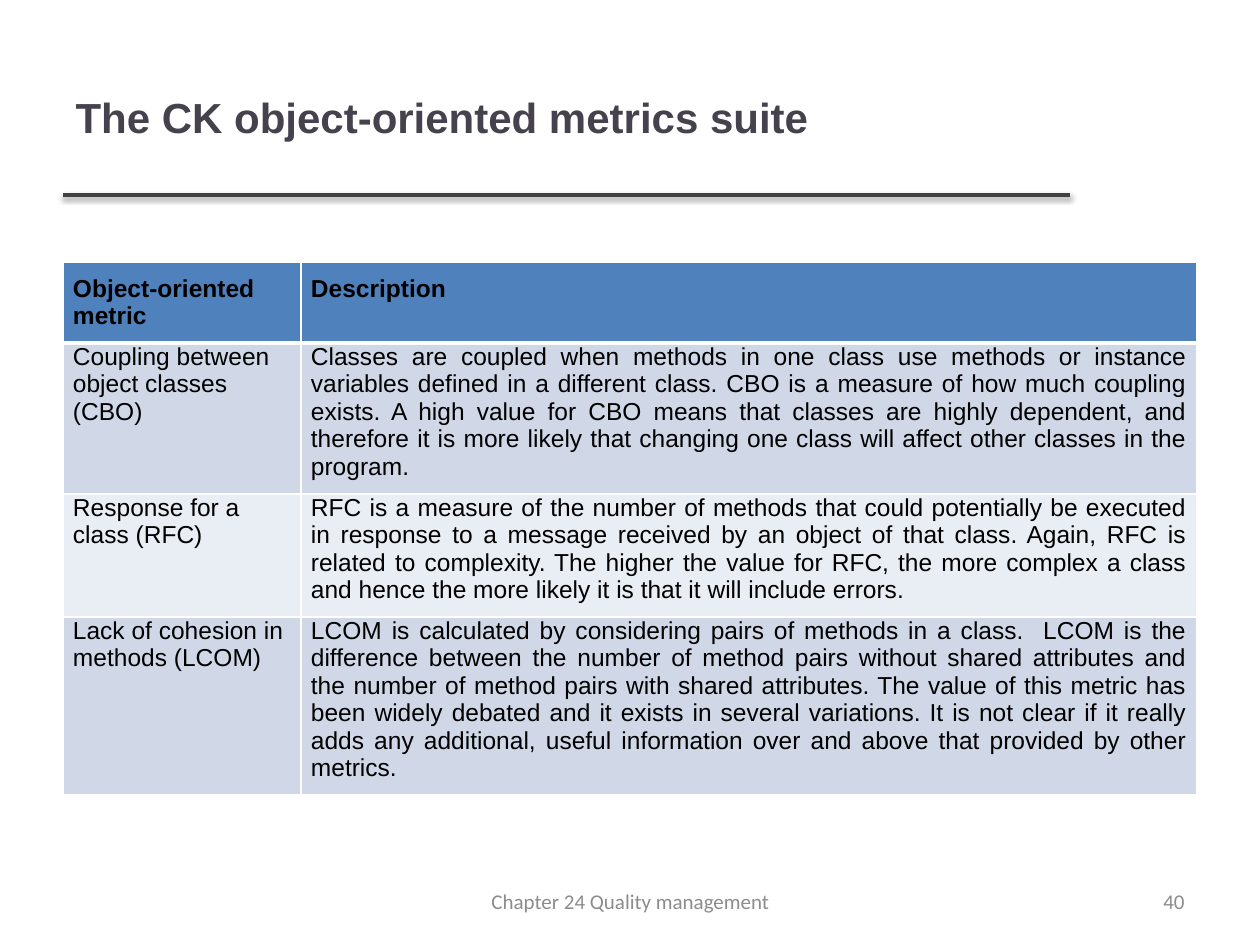
from lxml import etree
from pptx import Presentation
from pptx.dml.color import RGBColor
from pptx.enum.shapes import MSO_CONNECTOR
from pptx.enum.text import MSO_ANCHOR, PP_ALIGN
from pptx.oxml import parse_xml
from pptx.oxml.ns import qn
from pptx.util import Emu, Pt

LEFT, CENTER, RIGHT, JUSTIFY = PP_ALIGN.LEFT, PP_ALIGN.CENTER, PP_ALIGN.RIGHT, PP_ALIGN.JUSTIFY
MIDDLE = MSO_ANCHOR.MIDDLE
STRAIGHT = MSO_CONNECTOR.STRAIGHT
DRAWING = "http://schemas.openxmlformats.org/drawingml/2006/main"

# Content
TITLE = "The CK object-oriented metrics suite"
HEADER = ("Object-oriented metric", "Description")
METRICS = [
    ("Coupling between object classes (CBO)",
     "Classes are coupled when methods in one class use methods or instance variables "
     "defined in a different class. CBO is a measure of how much coupling exists. A high "
     "value for CBO means that classes are highly dependent, and therefore it is more likely "
     "that changing one class will affect other classes in the program."),
    ("Response for a class (RFC)",
     "RFC is a measure of the number of methods that could potentially be executed in "
     "response to a message received by an object of that class. Again, RFC is related to "
     "complexity. The higher the value for RFC, the more complex a class and hence the more "
     "likely it is that it will include errors."),
    ("Lack of cohesion in methods (LCOM)",
     "LCOM is calculated by considering pairs of methods in a class.  LCOM is the difference "
     "between the number of method pairs without shared attributes and the number of method "
     "pairs with shared attributes. The value of this metric has been widely debated and it "
     "exists in several variations. It is not clear if it really adds any additional, useful "
     "information over and above that provided by other metrics."),
]
FOOTERS = [  # text, left, width, alignment
    ("Chapter 24 Quality management", 431, 399, CENTER),
    ("40", 903, 294, RIGHT),
]

# Layout in px, 126 to the inch
COLUMN_WIDTHS = (238, 896)
ROW_HEIGHTS = (80, 150, 123, 178)
TABLE_LEFT, TABLE_TOP = 63, 262
HEADER_FILL, BAND_FILLS = "4F81BD", ("D0D8E8", "E9EDF4")


def px(length):
    return Emu(round(length * 914400 / 126))


def color(value):
    return RGBColor.from_string(value)


def style(paragraph, name, size, value, bold=False, align=LEFT):
    paragraph.alignment = align
    font = paragraph.font
    font.name, font.size, font.bold = name, Pt(size), bold
    font.color.rgb = color(value)


def add_borders(cell, bottom):
    properties = cell._tc.get_or_add_tcPr()
    for index, (side, width) in enumerate(zip("LRTB", (1, 1, 1, bottom))):
        border = parse_xml(
            f'<a:ln{side} xmlns:a="{DRAWING}" w="{Pt(width)}"><a:solidFill>'
            f'<a:srgbClr val="FFFFFF"/></a:solidFill></a:ln{side}>')
        properties.insert(index, border)


def add_shadow(line):
    effects = etree.SubElement(line._element.spPr, qn("a:effectLst"))
    effects.append(parse_xml(
        f'<a:outerShdw xmlns:a="{DRAWING}" blurRad="{Pt(3.1)}" dist="{Pt(1.6)}" '
        'dir="5400000" rotWithShape="0"><a:srgbClr val="000000">'
        '<a:alpha val="38000"/></a:srgbClr></a:outerShdw>'))


deck = Presentation()
deck.slide_width, deck.slide_height = px(1260), px(945)
slide = deck.slides.add_slide(deck.slide_layouts[5])

# Title and the rule below it
title = slide.shapes.title
title.left, title.top, title.width, title.height = px(63), px(38), px(1006), px(157)
title.text_frame.text = TITLE
title.text_frame.vertical_anchor = MIDDLE
style(title.text_frame.paragraphs[0], "Arial", 24, "46424D", bold=True)

rule = slide.shapes.add_connector(STRAIGHT, px(63), px(195), px(1070), px(195))
rule.line.color.rgb = color("404040")
rule.line.width = Pt(2)
add_shadow(rule)

# Metrics table
rows = [HEADER] + METRICS
table = slide.shapes.add_table(
    len(rows), len(HEADER), px(TABLE_LEFT), px(TABLE_TOP),
    px(sum(COLUMN_WIDTHS)), px(sum(ROW_HEIGHTS))).table
for column, width in zip(table.columns, COLUMN_WIDTHS):
    column.width = px(width)
for row_index, (texts, height) in enumerate(zip(rows, ROW_HEIGHTS)):
    is_header = row_index == 0
    table.rows[row_index].height = px(height)
    for column_index, text in enumerate(texts):
        cell = table.cell(row_index, column_index)
        cell.text = text
        cell.margin_left = cell.margin_right = px(10)
        cell.margin_top = px(13 if is_header else 0)
        cell.margin_bottom = px(13)
        cell.fill.solid()
        cell.fill.fore_color.rgb = color(
            HEADER_FILL if is_header else BAND_FILLS[(row_index - 1) % 2])
        add_borders(cell, bottom=3 if is_header else 1)
        style(cell.text_frame.paragraphs[0], "Arial", 14, "000000", bold=is_header,
              align=JUSTIFY if is_header or column_index == 1 else LEFT)

# Footer and page number
for text, left, width, align in FOOTERS:
    box = slide.shapes.add_textbox(px(left), px(876), px(width), px(50))
    box.text_frame.word_wrap = True
    box.text_frame.vertical_anchor = MIDDLE
    box.text_frame.text = text
    style(box.text_frame.paragraphs[0], "Calibri", 12, "8C8C8C", align=align)

deck.save("out.pptx")
